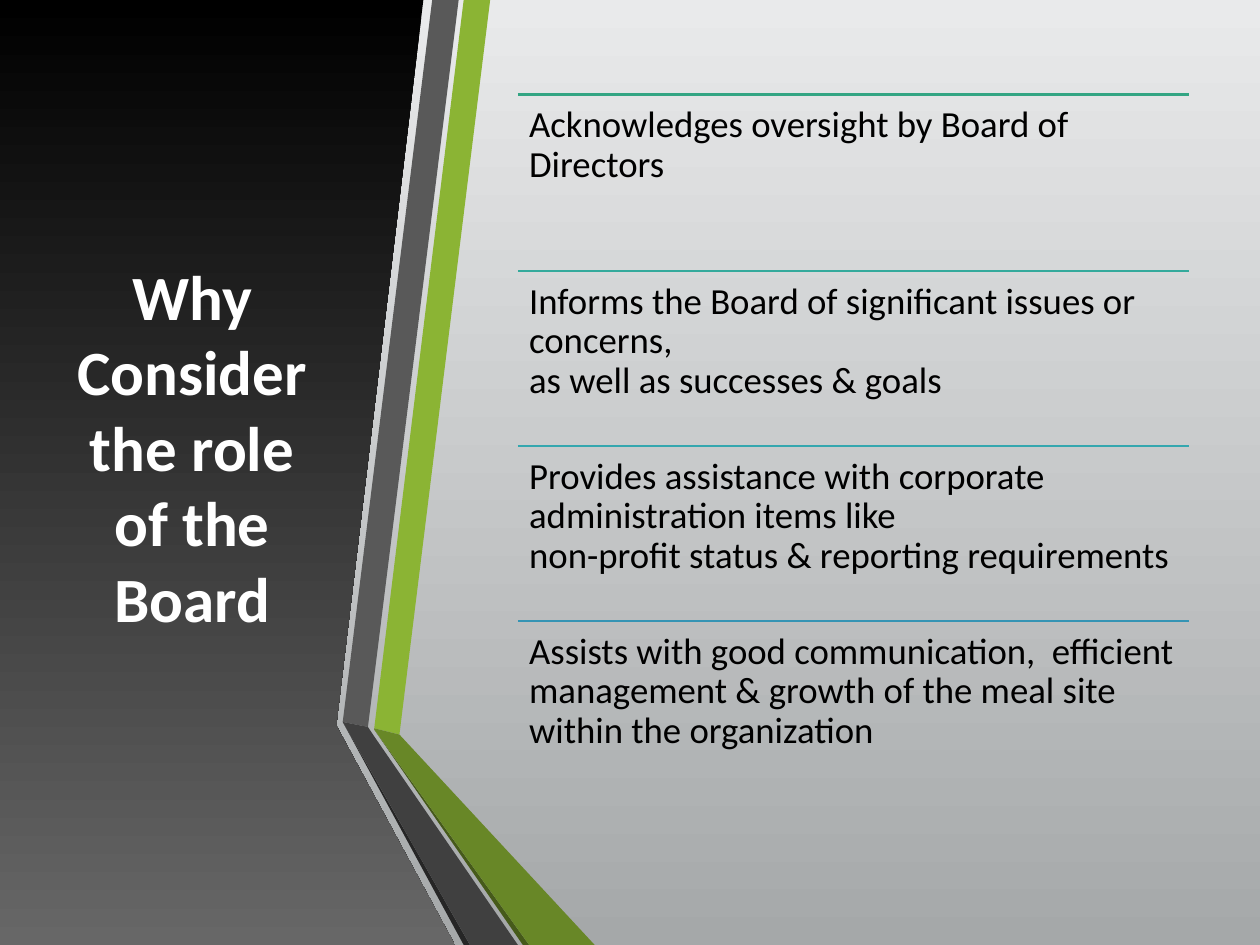
from dataclasses import dataclass

import pptx
import pptx.dml.color
import pptx.enum.shapes
import pptx.enum.text
import pptx.oxml.ns
import pptx.util
from lxml import etree

# The slide is a grid of 1000 columns by 750 rows of square cells.
COLS, ROWS = 1000, 750
CELL = pptx.util.Inches(10) // COLS

Point = tuple[int, int]


@dataclass(frozen=True)
class Theme:
    font: str = "Calibri"
    title_size: int = 36
    body_size: int = 21
    rule_width: float = 1.25
    title: str = "FFFFFF"
    body: str = "000000"
    backdrop: tuple[str, str] = ("E9EAEB", "A5A8A9")
    panel: tuple[str, str] = ("000000", "676767")
    green: str = "8BB434"
    green_fold: str = "688727"
    green_edge: str = "465A1A"
    grey: str = "595959"
    grey_fold: str = "404040"
    grey_edge: str = "262626"


@dataclass(frozen=True)
class Facet:
    color: str
    points: list[Point]


@dataclass(frozen=True)
class Reason:
    rule_color: str
    text: str


@dataclass(frozen=True)
class Box:
    left: int
    top: int
    width: int
    height: int


THEME = Theme()

PANEL = [(0, 0), (336, 0), (267, 575), (267, 576), (361, ROWS), (0, ROWS)]

RIBBONS = [
    Facet(THEME.green, [(297, 578), (317, 583), (389, 0), (368, 0)]),
    Facet(THEME.grey, [(364, 0), (343, 0), (272, 573), (292, 577)]),
    Facet(THEME.grey_edge, [(272, 573), (368, ROWS), (373, ROWS)]),
    Facet(THEME.green_edge, [(297, 579), (415, ROWS), (420, ROWS)]),
    Facet(THEME.green_fold, [(297, 579), (420, ROWS), (472, ROWS), (317, 583), (297, 578)]),
    Facet(THEME.grey_fold, [(411, ROWS), (296, 583), (292, 577), (272, 573), (373, ROWS)]),
]

TITLE = "Why Consider the role of the Board"
TITLE_BOX = Box(44, 75, 217, 558)

REASONS = [
    Reason("33A583", "Acknowledges oversight by Board of Directors"),
    Reason("34AA9C", "Informs the Board of significant issues or concerns,\v"
                     "as well as successes & goals"),
    Reason("34A7AF", "Provides assistance with corporate administration items like\v"
                     "non-profit status & reporting requirements"),
    Reason("3594B4", "Assists with good communication,  efficient management & growth "
                     "of the meal site within the organization"),
]
LIST_BOX = Box(411, 75, 533, 558)


def rgb(color: str) -> pptx.dml.color.RGBColor:
    return pptx.dml.color.RGBColor.from_string(color)


def fill_downward(fill, colors: tuple[str, str]) -> None:
    """Fill with a gradient running from the top colour to the bottom one."""
    fill.gradient()
    fill.gradient_angle = 270
    for stop, color in zip(fill.gradient_stops, colors):
        stop.color.rgb = rgb(color)


def add_polygon(s, points: list[Point]):
    builder = s.shapes.build_freeform(*points[0], scale=CELL)
    builder.add_line_segments(points[1:], close=True)
    sp = builder.convert_to_shape()
    sp.shadow.inherit = False
    sp.line.fill.background()
    return sp


def add_rule(s, left: int, right: int, row: int, color: str) -> None:
    line = s.shapes.add_connector(
        pptx.enum.shapes.MSO_CONNECTOR.STRAIGHT,
        left * CELL, row * CELL, right * CELL, row * CELL)
    line.line.color.rgb = rgb(color)
    line.line.width = pptx.util.Pt(THEME.rule_width)
    etree.SubElement(line._element.spPr, pptx.oxml.ns.qn("a:effectLst"))


def add_text(s, box: Box, text: str, size: int, color: str, bold: bool = False):
    sp = s.shapes.add_textbox(
        box.left * CELL, box.top * CELL, box.width * CELL, box.height * CELL)
    tf = sp.text_frame
    tf.word_wrap = True
    tf.text = text
    for r in tf.paragraphs[0].runs:
        r.font.name = THEME.font
        r.font.size = pptx.util.Pt(size)
        r.font.bold = bold
        r.font.color.rgb = rgb(color)
    return tf


def add_title(s) -> None:
    tf = add_text(s, TITLE_BOX, TITLE, THEME.title_size, THEME.title, bold=True)
    tf.vertical_anchor = pptx.enum.text.MSO_ANCHOR.MIDDLE
    tf.paragraphs[0].alignment = pptx.enum.text.PP_ALIGN.CENTER


def add_reasons(s) -> None:
    """Stack the reasons in equal rows, each under its own rule."""
    inset = 9 * CELL
    for i, reason in enumerate(REASONS):
        top = LIST_BOX.top + round(i * LIST_BOX.height / len(REASONS))
        row = Box(LIST_BOX.left, top, LIST_BOX.width, LIST_BOX.height // len(REASONS))
        add_rule(s, row.left, row.left + row.width, top, reason.rule_color)
        tf = add_text(s, row, reason.text, THEME.body_size, THEME.body)
        tf.margin_left = tf.margin_right = tf.margin_top = tf.margin_bottom = inset
        tf.paragraphs[0].line_spacing = 0.9


def main() -> None:
    prs = pptx.Presentation()
    prs.slide_width, prs.slide_height = COLS * CELL, ROWS * CELL
    s = prs.slides.add_slide(prs.slide_layouts[6])
    fill_downward(s.background.fill, THEME.backdrop)
    fill_downward(add_polygon(s, PANEL).fill, THEME.panel)
    add_title(s)
    for facet in RIBBONS:
        sp = add_polygon(s, facet.points)
        sp.fill.solid()
        sp.fill.fore_color.rgb = rgb(facet.color)
    add_reasons(s)
    prs.save("out.pptx")


if __name__ == "__main__":
    main()
